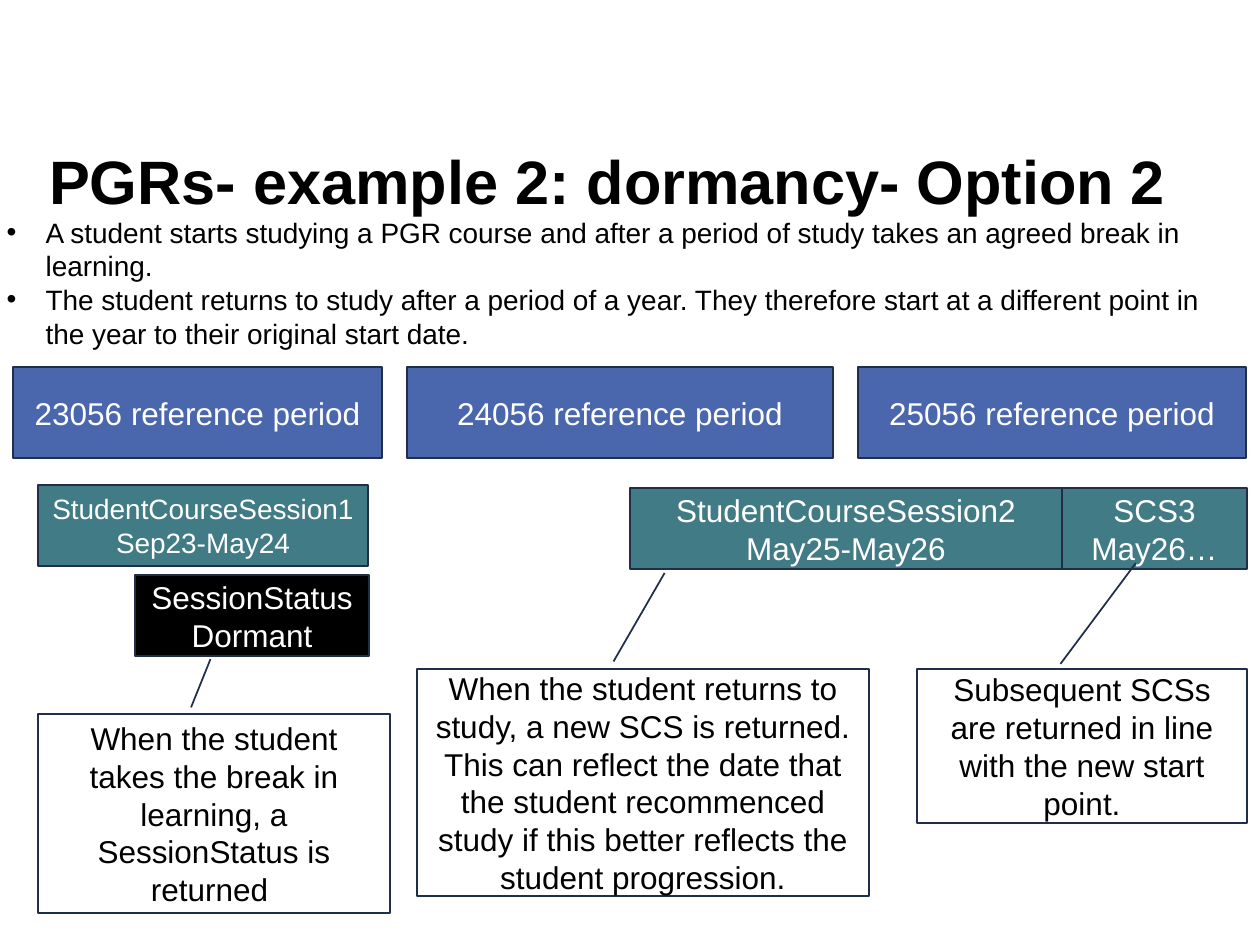
import pptx
import pptx.dml.color
import pptx.enum.shapes
import pptx.enum.text
import pptx.util

RGBColor = pptx.dml.color.RGBColor
SHAPE = pptx.enum.shapes.MSO_SHAPE
ALIGN = pptx.enum.text.PP_ALIGN
ANCHOR = pptx.enum.text.MSO_ANCHOR
AUTO_SIZE = pptx.enum.text.MSO_AUTO_SIZE

BLACK = RGBColor(0x00, 0x00, 0x00)
WHITE = RGBColor(0xFF, 0xFF, 0xFF)
BLUE = RGBColor(0x4A, 0x66, 0xAC)
TEAL = RGBColor(0x41, 0x7B, 0x85)
NAVY = RGBColor(0x20, 0x2D, 0x4B)

PX_PER_INCH = 126
FONT_NAME = "Arial"
BULLET_INDENT = 39

TITLE = "PGRs- example 2: dormancy- Option 2"
TITLE_BOX = (49, 136, 1160, 120)
BULLETS = [
    "A student starts studying a PGR course and after a period of study takes an agreed break in learning.",
    "The student returns to study after a period of a year. They therefore start at a different point in the year to their original start date.",
]
BULLETS_BOX = (-6, 209, 1255, 186)

PERIOD_TOP, PERIOD_HEIGHT = 367, 91
PERIODS = [
    ("23056 reference period", 13, 369),
    ("24056 reference period", 407, 426),
    ("25056 reference period", 858, 388),
]

SESSION_HEIGHT = 81
SESSIONS = [
    ("StudentCourseSession1\nSep23-May24", 38, 485, 330, TEAL, 16),
    ("SessionStatus\nDormant", 135, 575, 234, BLACK, 18),
    ("StudentCourseSession2\nMay25-May26", 630, 488, 432, TEAL, 18),
    ("SCS3\nMay26…", 1062, 488, 185, TEAL, 18),
]

POINTER_START = (-0.033, 0.435)
CALLOUTS = [
    ("When the student takes the break in learning, a SessionStatus is returned ",
     (38, 714, 352, 199), (-0.275, 0.49)),
    ("When the student returns to study, a new SCS is returned. This can reflect the date that the student recommenced study if this better reflects the student progression.",
     (417, 669, 452, 227), (-0.423, 0.548)),
    ("Subsequent SCSs are returned in line with the new start point.",
     (917, 669, 330, 154), (-0.687, 0.663)),
]


def px(length):
    return pptx.util.Emu(round(length * 914400 / PX_PER_INCH))


def set_attributes(target, values):
    for name, value in values.items():
        setattr(target, name, value)


def place(shape, box):
    set_attributes(shape, dict(zip(("left", "top", "width", "height"), map(px, box))))


def format_text(text_frame, size, color, bold=False, **paragraph_format):
    for paragraph in text_frame.paragraphs:
        set_attributes(paragraph, paragraph_format)
        set_attributes(paragraph.font, {"name": FONT_NAME, "size": pptx.util.Pt(size), "bold": bold})
        paragraph.font.color.rgb = color


def add_box(slide, preset, text, box, fill, size, color):
    shape = slide.shapes.add_shape(preset, *map(px, box))
    shape.shadow.inherit = False
    if fill is None:
        shape.fill.background()
    else:
        shape.fill.solid()
        shape.fill.fore_color.rgb = fill
    shape.line.color.rgb = NAVY
    shape.line.width = pptx.util.Pt(1)
    text_frame = shape.text_frame
    text_frame.text = text
    set_attributes(text_frame, {"word_wrap": True, "vertical_anchor": ANCHOR.MIDDLE})
    format_text(text_frame, size, color, alignment=ALIGN.CENTER)
    return shape


def add_title(slide):
    title = slide.shapes.title
    place(title, TITLE_BOX)
    text_frame = title.text_frame
    text_frame.text = TITLE
    set_attributes(text_frame, {
        "margin_left": 0, "margin_top": 0, "margin_right": 0, "margin_bottom": 0,
        "vertical_anchor": ANCHOR.TOP, "word_wrap": True, "auto_size": AUTO_SIZE.NONE,
    })
    format_text(text_frame, 35, BLACK, bold=True,
                alignment=ALIGN.LEFT, line_spacing=pptx.util.Pt(46))


def add_bullets(slide):
    body = slide.placeholders[1]
    place(body, BULLETS_BOX)
    text_frame = body.text_frame
    text_frame.text = "\n".join(BULLETS)
    set_attributes(text_frame, {
        "vertical_anchor": ANCHOR.TOP, "word_wrap": True,
        "auto_size": AUTO_SIZE.SHAPE_TO_FIT_TEXT,
    })
    for paragraph in text_frame.paragraphs:
        properties = paragraph._p.get_or_add_pPr()
        properties.set("marL", str(px(BULLET_INDENT)))
        properties.set("indent", str(-px(BULLET_INDENT)))
        bullet = pptx.oxml.xmlchemy.OxmlElement("a:buChar")
        bullet.set("char", "•")
        properties.append(bullet)
    format_text(text_frame, 16, BLACK, space_before=pptx.util.Pt(0))


def main():
    presentation = pptx.Presentation()
    presentation.slide_width = pptx.util.Inches(10)
    presentation.slide_height = pptx.util.Inches(7.5)
    slide = presentation.slides.add_slide(presentation.slide_layouts[1])
    add_title(slide)
    add_bullets(slide)
    for text, left, width in PERIODS:
        add_box(slide, SHAPE.RECTANGLE, text, (left, PERIOD_TOP, width, PERIOD_HEIGHT), BLUE, 18, WHITE)
    for text, left, top, width, fill, size in SESSIONS:
        add_box(slide, SHAPE.RECTANGLE, text, (left, top, width, SESSION_HEIGHT), fill, size, WHITE)
    for text, box, pointer_end in CALLOUTS:
        callout = add_box(slide, SHAPE.LINE_CALLOUT_1, text, box, None, 18, BLACK)
        for index, value in enumerate(POINTER_START + pointer_end):
            callout.adjustments[index] = value
    presentation.save("out.pptx")


if __name__ == "__main__":
    main()
